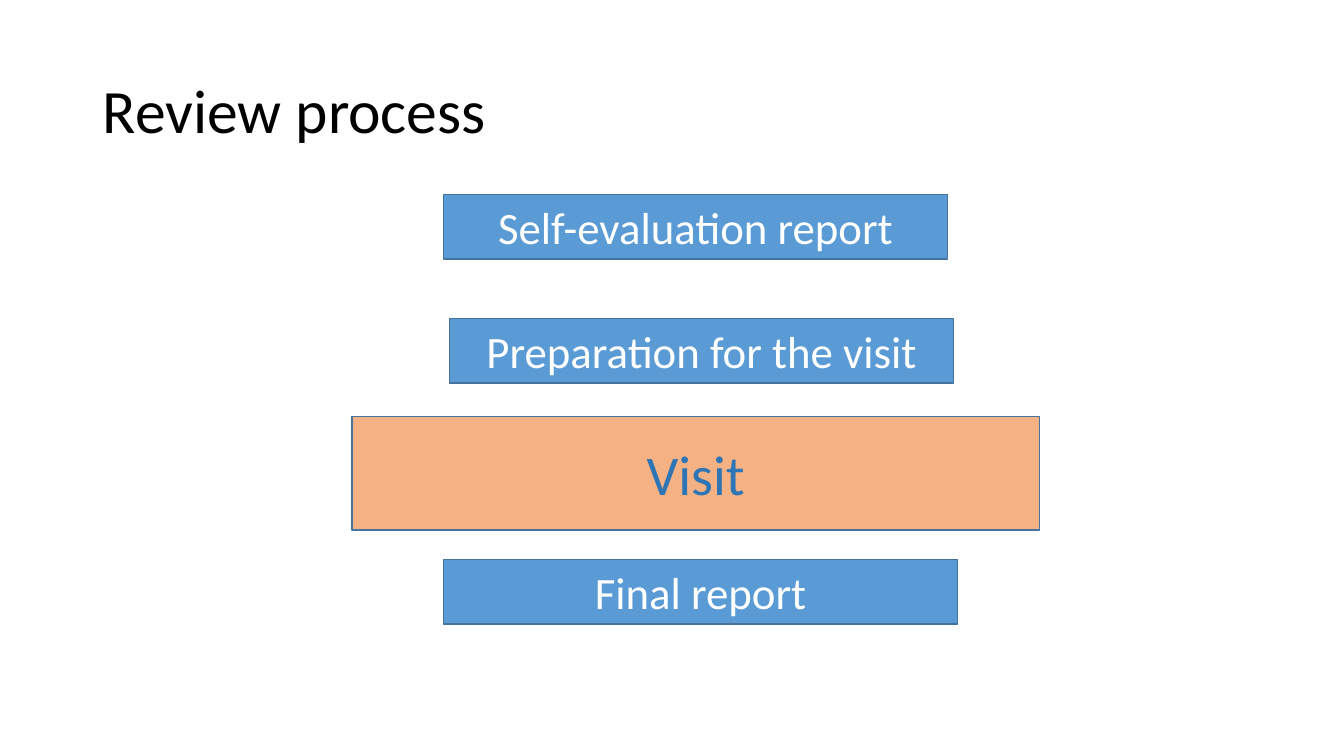
from pptx import Presentation
from pptx.dml.color import RGBColor
from pptx.enum.shapes import MSO_SHAPE
from pptx.enum.text import MSO_ANCHOR, PP_ALIGN
from pptx.util import Inches, Pt

RECTANGLE = MSO_SHAPE.RECTANGLE
MIDDLE = MSO_ANCHOR.MIDDLE
LEFT, CENTER = PP_ALIGN.LEFT, PP_ALIGN.CENTER

FONT = "Calibri"
BLANK_LAYOUT = 6
COLORS = {
    "title": "000000",
    "step": "5B9BD5",
    "step_text": "FFFFFF",
    "visit": "F4B183",
    "visit_text": "2E75B6",
    "outline": "43739E",
}

TITLE_BOX = (0.92, 0.4, 11.5, 1.45)
PROCESS_BOX = (3.49, 1.93, 6.82, 4.26)

# Label, offset from the process box (left, top), size (width, height), style, points
STEPS = [
    ("Self-evaluation report", 0.91, 0, 5, 0.64, "step", 32),
    ("Preparation for the visit", 0.97, 1.23, 5, 0.64, "step", 32),
    ("Visit", 0, 2.2, 6.82, 1.13, "visit", 40),
    ("Final report", 0.91, 3.62, 5.1, 0.64, "step", 32),
]


def color(name):
    return RGBColor.from_string(COLORS[name])


def write_text(shape, text, size, color_name, alignment):
    text_frame = shape.text_frame
    text_frame.word_wrap = True
    text_frame.vertical_anchor = MIDDLE
    text_frame.text = text
    paragraph = text_frame.paragraphs[0]
    paragraph.alignment = alignment
    font = paragraph.runs[0].font
    font.name = FONT
    font.size = Pt(size)
    font.color.rgb = color(color_name)
    return paragraph


def add_title(slide, box, text):
    shape = slide.shapes.add_textbox(*map(Inches, box))
    paragraph = write_text(shape, text, 44, "title", LEFT)
    paragraph.line_spacing = 0.9


def add_process(slide, box, steps):
    left, top = box[:2]
    for label, offset_x, offset_y, width, height, style, size in steps:
        bounds = (left + offset_x, top + offset_y, width, height)
        shape = slide.shapes.add_shape(RECTANGLE, *map(Inches, bounds))
        shape.shadow.inherit = False
        shape.fill.solid()
        shape.fill.fore_color.rgb = color(style)
        shape.line.color.rgb = color("outline")
        shape.line.width = Pt(1)
        write_text(shape, label, size, style + "_text", CENTER)


def main():
    presentation = Presentation()
    presentation.slide_width = Inches(13.33)
    presentation.slide_height = Inches(7.5)
    slide = presentation.slides.add_slide(presentation.slide_layouts[BLANK_LAYOUT])

    # Heading
    add_title(slide, TITLE_BOX, "Review process")

    # Stages of the review, from top to bottom
    add_process(slide, PROCESS_BOX, STEPS)

    presentation.save("out.pptx")


if __name__ == "__main__":
    main()
